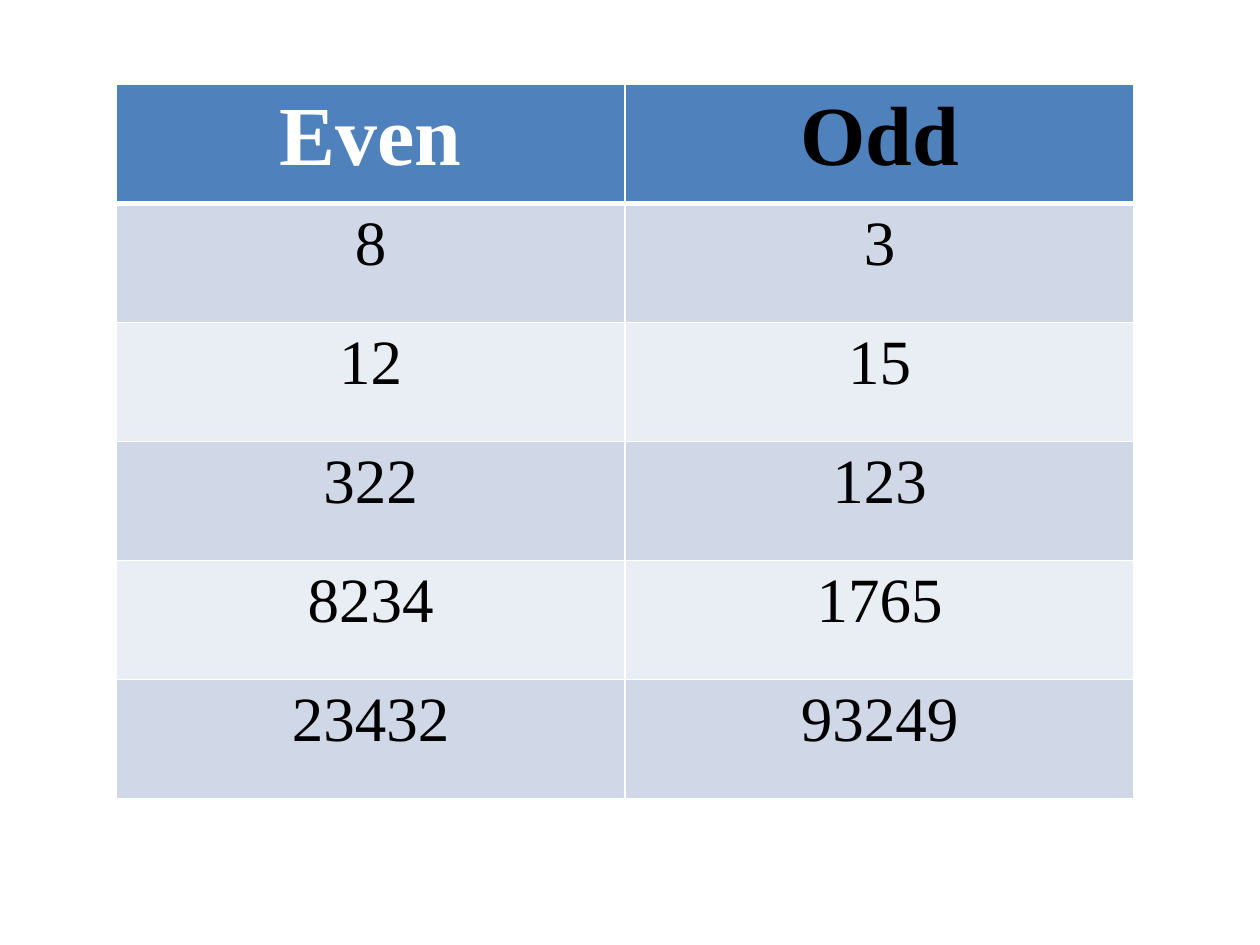
from typing import NamedTuple

from lxml import etree
from pptx import Presentation
from pptx.dml.color import RGBColor
from pptx.enum.text import PP_ALIGN
from pptx.oxml.ns import qn
from pptx.util import Cm, Pt

CENTER = PP_ALIGN.CENTER
FONT = "Times New Roman"
COLORS = {
    "header": "4F81BD",
    "odd_band": "D0D8E8",
    "even_band": "E9EDF4",
    "white": "FFFFFF",
    "black": "000000",
}
THIN, THICK = Pt(1), Pt(3)
COLUMN_WIDTH, ROW_HEIGHT = Cm(10.26), Cm(2.4)


class CellStyle(NamedTuple):
    fill: str
    text_color: str
    size: int
    bold: bool
    top: int = THIN
    bottom: int = THIN


NUMBERS = [(8, 3), (12, 15), (322, 123), (8234, 1765), (23432, 93249)]


def add_borders(cell, style: CellStyle) -> None:
    """Put white border lines ahead of the fill, as the schema demands."""
    properties = cell._tc.get_or_add_tcPr()
    widths = {"lnL": THIN, "lnR": THIN, "lnT": style.top, "lnB": style.bottom}
    for position, (side, width) in enumerate(widths.items()):
        line = etree.Element(qn(f"a:{side}"), w=str(int(width)))
        fill = etree.SubElement(line, qn("a:solidFill"))
        etree.SubElement(fill, qn("a:srgbClr"), val=COLORS["white"])
        properties.insert(position, line)


def fill_cell(cell, content: str, style: CellStyle) -> None:
    cell.fill.solid()
    cell.fill.fore_color.rgb = RGBColor.from_string(COLORS[style.fill])
    add_borders(cell, style)
    cell.text = content
    paragraph = cell.text_frame.paragraphs[0]
    paragraph.alignment = CENTER
    font = paragraph.font
    font.name, font.size, font.bold = FONT, Pt(style.size), style.bold
    font.color.rgb = RGBColor.from_string(COLORS[style.text_color])


def add_number_table(slide) -> None:
    row_count = len(NUMBERS) + 1
    table = slide.shapes.add_table(
        row_count, 2, Cm(2.34), Cm(1.7), 2 * COLUMN_WIDTH, row_count * ROW_HEIGHT
    ).table

    for column, (heading, color) in enumerate([("Even", "white"), ("Odd", "black")]):
        style = CellStyle("header", color, 48, True, bottom=THICK)
        fill_cell(table.cell(0, column), heading, style)

    for row, numbers in enumerate(NUMBERS, start=1):
        band = "odd_band" if row % 2 else "even_band"
        style = CellStyle(band, "black", 36, False, top=THICK if row == 1 else THIN)
        for column, number in enumerate(numbers):
            fill_cell(table.cell(row, column), str(number), style)


def main() -> None:
    presentation = Presentation()
    presentation.slide_width, presentation.slide_height = Cm(25.4), Cm(19.05)
    slide = presentation.slides.add_slide(presentation.slide_layouts[6])
    add_number_table(slide)
    presentation.save("out.pptx")


if __name__ == "__main__":
    main()
